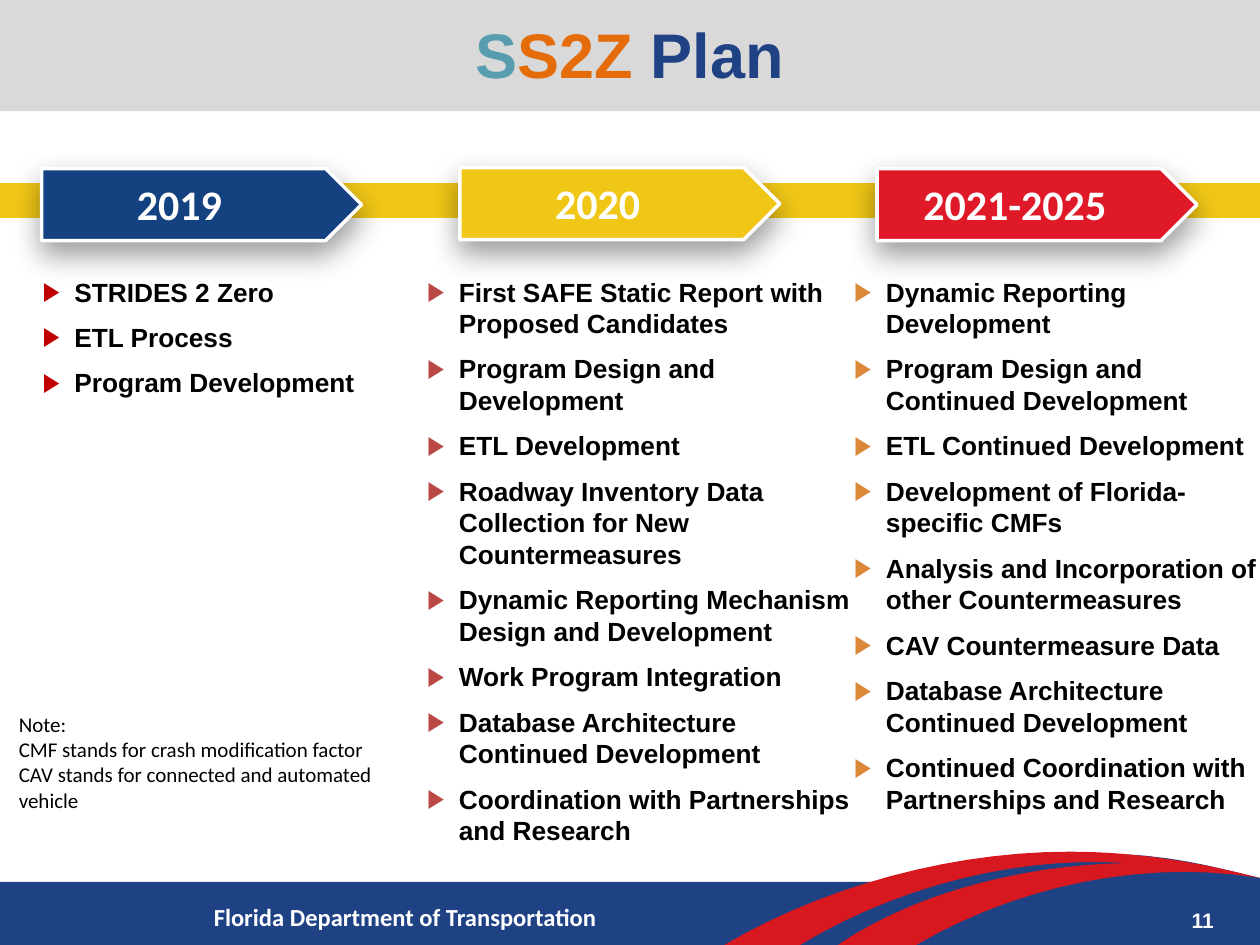
"""Build the SS2Z Plan timeline slide with three dated columns."""
from lxml import etree
from pptx import Presentation
from pptx.dml.color import RGBColor
from pptx.enum import shapes, text
from pptx.oxml import ns
from pptx.util import Cm, Pt

WHITE = RGBColor(0xFF, 0xFF, 0xFF)
BLACK = RGBColor(0, 0, 0)
GREY = RGBColor(0xD9, 0xD9, 0xD9)
BLUE = RGBColor(0x1F, 0x42, 0x84)
NAVY = RGBColor(0x14, 0x42, 0x81)
YELLOW = RGBColor(0xF1, 0xC7, 0x17)
RED = RGBColor(0xE0, 0x19, 0x28)
SWOOSH_RED = RGBColor(0xD7, 0x18, 0x1F)
TEAL = RGBColor(0x58, 0x9C, 0xAF)
ORANGE = RGBColor(0xE4, 0x6C, 0x0A)
DARK_RED = RGBColor(0xC0, 0, 0)
BRICK = RGBColor(0xBA, 0x49, 0x45)
AMBER = RGBColor(0xDB, 0x88, 0x38)

PAGE_WIDTH, PAGE_HEIGHT = 25.4, 19.05
TITLE = [("S", TEAL), ("S2Z", ORANGE), (" Plan", BLUE)]
FOOTER = "Florida Department of Transportation"
NOTE = ["Note:", "CMF stands for crash modification factor",
        "CAV stands for connected and automated vehicle"]

COLUMNS = [
    dict(period="2019", fill=NAVY, tag=(0.84, 3.4), bullet=DARK_RED,
         area=(0.38, 5.31, 7.75, 3), items=[
             "STRIDES 2 Zero", "ETL Process", "Program Development"]),
    dict(period="2020", fill=YELLOW, tag=(9.27, 3.38), bullet=BRICK,
         area=(8.13, 5.31, 9.58, 12.78), items=[
             "First SAFE Static Report with Proposed Candidates",
             "Program Design and Development",
             "ETL Development",
             "Roadway Inventory Data Collection for New Countermeasures",
             "Dynamic Reporting Mechanism Design and Development",
             "Work Program Integration",
             "Database Architecture Continued Development",
             "Coordination with Partnerships and Research"]),
    dict(period="2021-2025", fill=RED, tag=(17.68, 3.4), bullet=AMBER,
         area=(16.74, 5.31, 9.14, 11.48), items=[
             "Dynamic Reporting Development",
             "Program Design and Continued Development",
             "ETL Continued Development",
             "Development of Florida-specific CMFs",
             "Analysis and Incorporation of other Countermeasures",
             "CAV Countermeasure Data",
             "Database Architecture Continued Development",
             "Continued Coordination with Partnerships and Research"]),
]

BLUE_HILL = [
    [(17.42, 18.01)],
    [(22.05, 16.66), (23.88, 17.35), (25.4, 17.7)],
    [(25.4, 19.05)],
    [(16.08, 19.05)],
]
RED_SWOOSH = [
    [(14.6, 19.05)],
    [(16.64, 17.86), (19.18, 17.17), (21.56, 17.17)],
    [(22.86, 17.17), (24.13, 17.37), (25.4, 17.7)],
    [(23.11, 17.32), (20.57, 17.83), (18.47, 19.05)],
    [(16.89, 19.05)],
    [(18.54, 17.93), (20.83, 17.42), (22.73, 17.4)],
    [(20.57, 17.25), (18.16, 17.83), (16.13, 19.05)],
]
CURVE_STEPS = 14


def add_xml(parent, tag, **attributes):
    return etree.SubElement(parent, ns.qn(tag), attributes)


def paint(shape, color):
    shape.shadow.inherit = False
    shape.fill.solid()
    shape.fill.fore_color.rgb = color
    shape.line.fill.background()
    return shape


def add_block(page, kind, area, color):
    return paint(page.shapes.add_shape(kind, *map(Cm, area)), color)


def curve_point(points, t):
    weights = ((1 - t) ** 3, 3 * t * (1 - t) ** 2, 3 * t * t * (1 - t), t ** 3)
    return tuple(sum(w * p[axis] for w, p in zip(weights, points)) for axis in (0, 1))


def add_outline(page, segments, color):
    points = list(segments[0])
    for segment in segments[1:]:
        if len(segment) == 1:
            points += segment
        else:
            controls = [points[-1], *segment]
            points += [curve_point(controls, step / CURVE_STEPS)
                       for step in range(1, CURVE_STEPS + 1)]
    corners = [(Cm(x), Cm(y)) for x, y in points]
    builder = page.shapes.build_freeform(*corners[0])
    builder.add_line_segments(corners[1:], close=True)
    paint(builder.convert_to_shape(), color)


def style(span, size, color, font, bold=True):
    span.font.size = Pt(size)
    span.font.name = font
    span.font.bold = bold
    span.font.color.rgb = color


def add_text(page, area, lines, size, color, font="Calibri", bold=True,
             align=text.PP_ALIGN.LEFT, anchor=text.MSO_ANCHOR.TOP):
    frame = page.shapes.add_textbox(*map(Cm, area)).text_frame
    frame.word_wrap = True
    frame.vertical_anchor = anchor
    frame.text = "\n".join(lines)
    for para in frame.paragraphs:
        para.alignment = align
        for span in para.runs:
            style(span, size, color, font, bold)
    return frame


def add_items(page, column):
    frame = add_text(page, column["area"], column["items"], 15, BLACK, "Arial")
    frame.margin_left, frame.margin_right = 0, Cm(0.51)
    frame.margin_top = frame.margin_bottom = Cm(0.25)
    for index, para in enumerate(frame.paragraphs):
        para.line_spacing = Pt(18)
        para.space_before = Pt(8 if index else 0)
        props = para._p.get_or_add_pPr()
        props.set("marL", str(Cm(1.12)))
        props.set("indent", str(-Cm(0.64)))
        add_xml(add_xml(props, "a:buClr"), "a:srgbClr", val=str(column["bullet"]))
        add_xml(props, "a:buFont", typeface="Arial")
        add_xml(props, "a:buChar", char="▶")


def add_tag(page, column):
    left, top = column["tag"]
    tag = add_block(page, shapes.MSO_SHAPE.PENTAGON, (left, top, 6.45, 1.45), column["fill"])
    tag.line.color.rgb = WHITE
    tag.line.width = Pt(2)
    effects = tag._element.spPr.find(ns.qn("a:effectLst"))
    shadow = add_xml(effects, "a:outerShdw", blurRad=str(Pt(17)), dist=str(Pt(7)),
                     dir="5400000", algn="t", rotWithShape="0")
    add_xml(add_xml(shadow, "a:srgbClr", val=str(BLACK)), "a:alpha", val="40000")
    add_text(page, (left + 0.28, top + 0.08, 5, 1.27), [column["period"]], 24, WHITE,
             align=text.PP_ALIGN.CENTER)


def add_timeline(page):
    band = page.shapes.add_connector(shapes.MSO_CONNECTOR.STRAIGHT, 0, Cm(4.04),
                                     Cm(PAGE_WIDTH), Cm(4.04))
    band.line.color.rgb = YELLOW
    band.line.width = Pt(20)
    add_xml(band._element.spPr, "a:effectLst")


def add_title(page):
    frame = add_text(page, (1.27, 0.03, 22.86, 2.11), [""], 36, BLUE,
                     anchor=text.MSO_ANCHOR.MIDDLE, align=text.PP_ALIGN.CENTER)
    for words, color in TITLE:
        span = frame.paragraphs[0].add_run()
        span.text = words
        style(span, 36, color, "Arial")


def main():
    deck = Presentation()
    deck.slide_width, deck.slide_height = Cm(PAGE_WIDTH), Cm(PAGE_HEIGHT)
    page = deck.slides.add_slide(deck.slide_layouts[6])
    add_block(page, shapes.MSO_SHAPE.RECTANGLE, (0, 0, PAGE_WIDTH, 2.24), GREY)
    add_block(page, shapes.MSO_SHAPE.RECTANGLE, (0, 17.78, PAGE_WIDTH, 1.27), BLUE)
    add_text(page, (4.06, 18.06, 20.27, 0.86), [FOOTER], 14, WHITE)
    add_outline(page, BLUE_HILL, BLUE)
    add_outline(page, RED_SWOOSH, SWOOSH_RED)
    add_timeline(page)
    for column in COLUMNS:
        add_items(page, column)
        add_tag(page, column)
    add_title(page)
    add_text(page, (18.8, 18.03, 5.92, 1.02), ["11"], 12, WHITE, "Arial",
             align=text.PP_ALIGN.RIGHT, anchor=text.MSO_ANCHOR.MIDDLE)
    add_text(page, (0.13, 14.22, 7.82, 2.31), NOTE, 12, BLACK, bold=False)
    deck.save("out.pptx")


if __name__ == "__main__":
    main()
